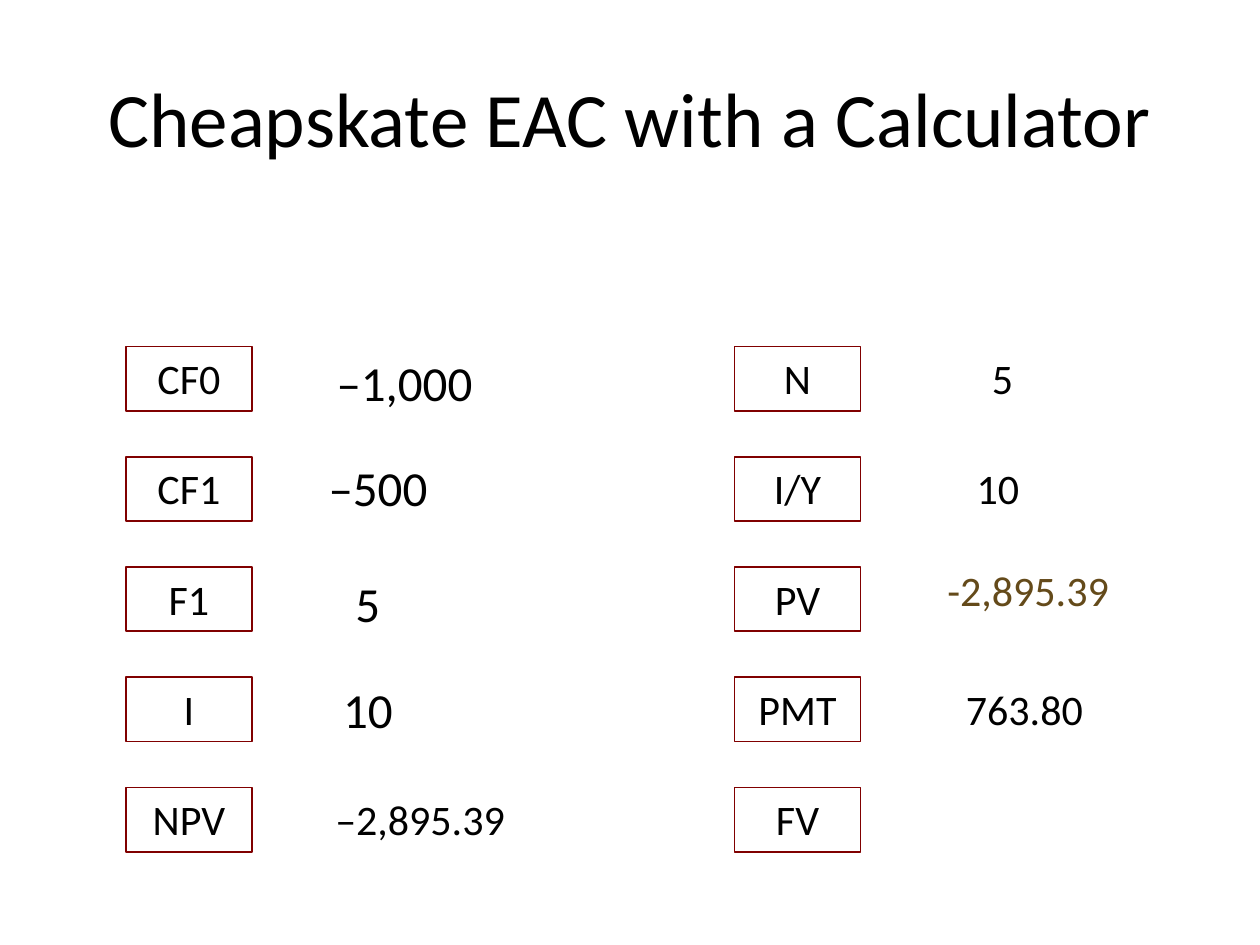
from pptx import Presentation
from pptx.dml.color import RGBColor
from pptx.enum.shapes import MSO_SHAPE as Shape
from pptx.enum.text import MSO_ANCHOR as Anchor, PP_ALIGN as Align
from pptx.util import Inches, Pt

FONT = "Calibri"
BLACK, WHITE, MAROON, BROWN = "000000", "FFFFFF", "800000", "644A1A"
ROW_PITCH = 0.875
KEY_WIDTH, KEY_HEIGHT = 1, 0.51

# Each row: key, value, value left from the panel, nudge down, width, format
CASH_FLOW_ROWS = [
    ("CF0", "–1,000", 1.42, 0, 1.58, {"size": 28}),
    ("CF1", "–500", 1.5, -0.04, 1, {"size": 28}),
    ("F1", "5", 1.42, 0, 1, {"size": 28}),
    ("I", "10", 1.42, -0.03, 1, {"size": 28}),
    ("NPV", "–2,895.39", 1.42, 0, 1.83, {}),
]
ANNUITY_ROWS = [
    ("N", " 5", 1.59, 0, 1, {}),
    ("I/Y", "10", 1.59, 0, 1, {}),
    ("PV", "-2,895.39", 1.59, -0.07, 2.08,
     {"color": BROWN, "align": Align.LEFT, "fill": None}),
    ("PMT", "763.80", 1.59, 0, 1.42, {}),
    ("FV", None, 0, 0, 0, {}),
]


def rgb(color):
    return RGBColor.from_string(color)


def add_text(shapes, text, left, top, width, height, *, size=24, color=BLACK,
             align=Align.CENTER, anchor=Anchor.TOP, fill=WHITE, line=None):
    box = (Inches(length) for length in (left, top, width, height))
    shape = shapes.add_shape(Shape.RECTANGLE, *box)
    shape.shadow.inherit = False
    if fill:
        shape.fill.solid()
        shape.fill.fore_color.rgb = rgb(fill)
    else:
        shape.fill.background()
    if line:
        shape.line.color.rgb = rgb(line)
        shape.line.width = Pt(1)
    else:
        shape.line.fill.background()
    frame = shape.text_frame
    frame.word_wrap = True
    frame.vertical_anchor = anchor
    paragraph = frame.paragraphs[0]
    paragraph.alignment = align
    run = paragraph.add_run()
    run.text = text
    run.font.name = FONT
    run.font.size = Pt(size)
    run.font.color.rgb = rgb(color)
    return shape


def add_calculator_panel(slide, rows, left, top):
    """Place a group of outlined keys with their values to the right."""
    keys = slide.shapes.add_group_shape()
    for index, (key, value, offset, nudge, width, style) in enumerate(rows):
        row_top = top + index * ROW_PITCH
        add_text(keys.shapes, key, left, row_top, KEY_WIDTH, KEY_HEIGHT, line=MAROON)
        if value:
            height = 0.57 if style.get("size") == 28 else 0.5
            add_text(slide.shapes, value, left + offset, row_top + nudge,
                     width, height, **style)


def main():
    presentation = Presentation()
    presentation.slide_width = Inches(10)
    presentation.slide_height = Inches(7.5)
    slide = presentation.slides.add_slide(presentation.slide_layouts[6])
    add_text(slide.shapes, "Cheapskate EAC with a Calculator", 0.5, 0.3, 9, 1.25,
             size=44, anchor=Anchor.MIDDLE)
    add_calculator_panel(slide, CASH_FLOW_ROWS, left=1, top=2.75)
    add_calculator_panel(slide, ANNUITY_ROWS, left=5.83, top=2.75)
    presentation.save("out.pptx")


if __name__ == "__main__":
    main()
